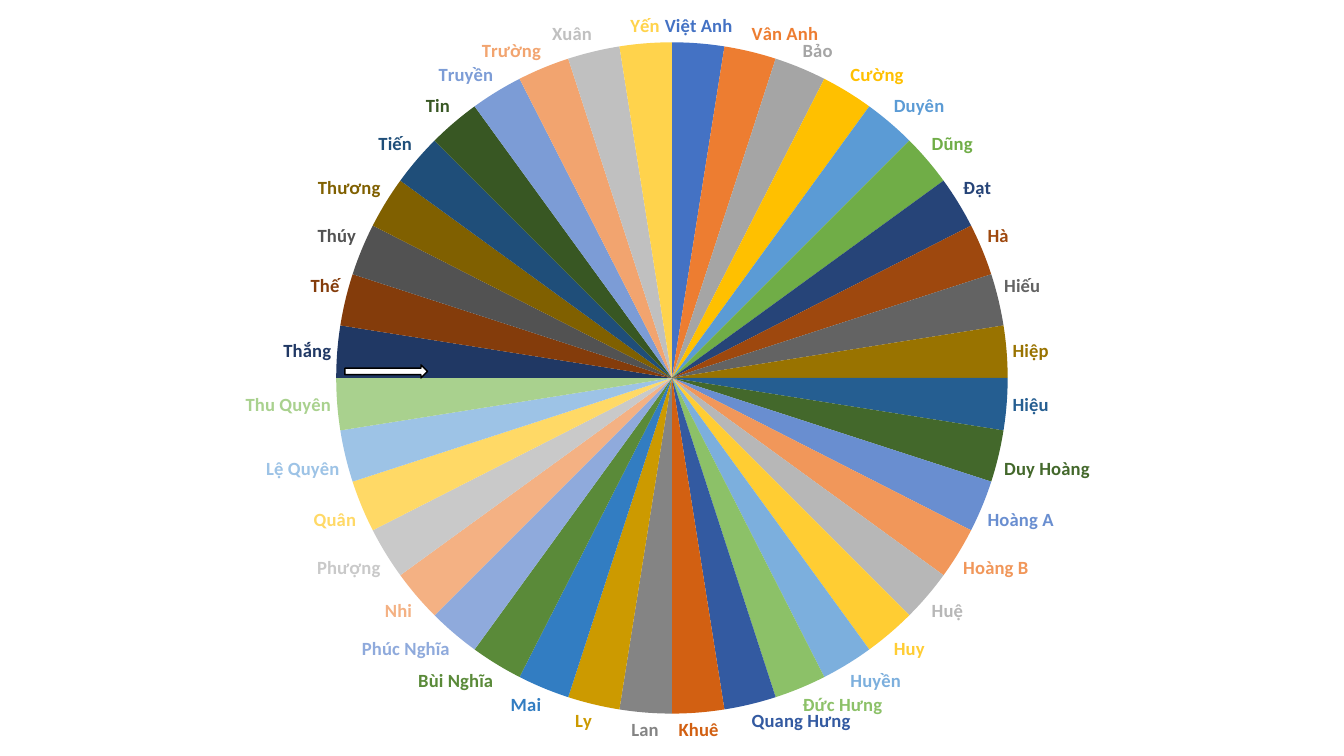
from lxml import etree
from pptx import Presentation
from pptx.chart.data import CategoryChartData
from pptx.dml.color import RGBColor
from pptx.enum.chart import XL_CHART_TYPE, XL_LABEL_POSITION
from pptx.enum.shapes import MSO_SHAPE
from pptx.oxml.ns import qn
from pptx.util import Inches, Pt

PIE = XL_CHART_TYPE.PIE
OUTSIDE_END = XL_LABEL_POSITION.OUTSIDE_END
RIGHT_ARROW = MSO_SHAPE.RIGHT_ARROW

# Names clockwise from the top, each with its slice and label colour
STUDENTS = {
    "Việt Anh": "4472C4", "Vân Anh": "ED7D31", "Bảo": "A5A5A5", "Cường": "FFC000",
    "Duyên": "5B9BD5", "Dũng": "70AD47", "Đạt": "264478", "Hà": "9E480E",
    "Hiếu": "636363", "Hiệp": "997300", "Hiệu": "255E91", "Duy Hoàng": "43682B",
    "Hoàng A": "698ED0", "Hoàng B": "F1975A", "Huệ": "B7B7B7", "Huy": "FFCD33",
    "Huyền": "7CAFDD", "Đức Hưng": "8CC168", "Quang Hưng": "335AA1", "Khuê": "D26012",
    "Lan": "848484", "Ly": "CC9A00", "Mai": "327DC2", "Bùi Nghĩa": "5A8A39",
    "Phúc Nghĩa": "8FAADC", "Nhi": "F4B183", "Phượng": "C9C9C9", "Quân": "FFD966",
    "Lệ Quyên": "9DC3E6", "Thu Quyên": "A9D18E", "Thắng": "203864", "Thế": "843C0B",
    "Thúy": "525252", "Thương": "806000", "Tiến": "1F4E79", "Tin": "385723",
    "Truyền": "7C9CD6", "Trường": "F2A46F", "Xuân": "C0C0C0", "Yến": "FFD34C",
}
LABEL_FONT = {"name": "Calibri", "size": Pt(13.3), "bold": True}


def rgb(hex_code):
    return RGBColor.from_string(hex_code)


def add_value(parent, tag, value):
    etree.SubElement(parent, qn(tag)).set("val", str(value))


prs = Presentation()
prs.slide_width, prs.slide_height = Inches(13.33), Inches(7.5)
slide = prs.slides.add_slide(prs.slide_layouts[6])

# Wheel of equal slices
data = CategoryChartData()
data.categories = list(STUDENTS)
data.add_series("Series 1", [2] * len(STUDENTS))
wheel = slide.shapes.add_chart(PIE, 0, 0, prs.slide_width, prs.slide_height, data).chart
wheel.has_legend = False
wheel.has_title = False
wheel.font.name, wheel.font.size = "Calibri", Pt(10)
plot = wheel.plots[0]
plot.vary_by_categories = True

# Slice fills and matching names
for index, colour in enumerate(STUDENTS.values()):
    part = plot.series[0].points[index]
    part.format.fill.solid()
    part.format.fill.fore_color.rgb = rgb(colour)
    part.format.line.fill.background()
    label = part.data_label
    for key, value in LABEL_FONT.items():
        setattr(label.font, key, value)
    label.font.color.rgb = rgb(colour)
    label.position = OUTSIDE_END

# Labels show the name only
for tag, shown in {"c:showVal": "0", "c:showCatName": "1", "c:showPercent": "0"}.items():
    for flag in wheel.element.iter(qn(tag)):
        flag.set("val", shown)

# Wheel centred, filling most of the slide height
plot_area = next(wheel.element.iter(qn("c:plotArea")))
for old_layout in plot_area.findall(qn("c:layout")):
    plot_area.remove(old_layout)
layout = etree.Element(qn("c:layout"))
plot_area.insert(0, layout)
manual = etree.SubElement(layout, qn("c:manualLayout"))
for tag, value in {"c:layoutTarget": "inner", "c:xMode": "edge", "c:yMode": "edge",
                   "c:x": 0.25, "c:y": 0.056, "c:w": 0.5, "c:h": 0.888}.items():
    add_value(manual, tag, value)

# Pointer
pointer = slide.shapes.add_shape(RIGHT_ARROW, Inches(3.42), Inches(3.62), Inches(0.82), Inches(0.13))
pointer.shadow.inherit = False
pointer.fill.solid()
pointer.fill.fore_color.rgb = rgb("FFFFFF")
pointer.line.color.rgb = rgb("000000")
pointer.line.width = Pt(1)

prs.save("out.pptx")
